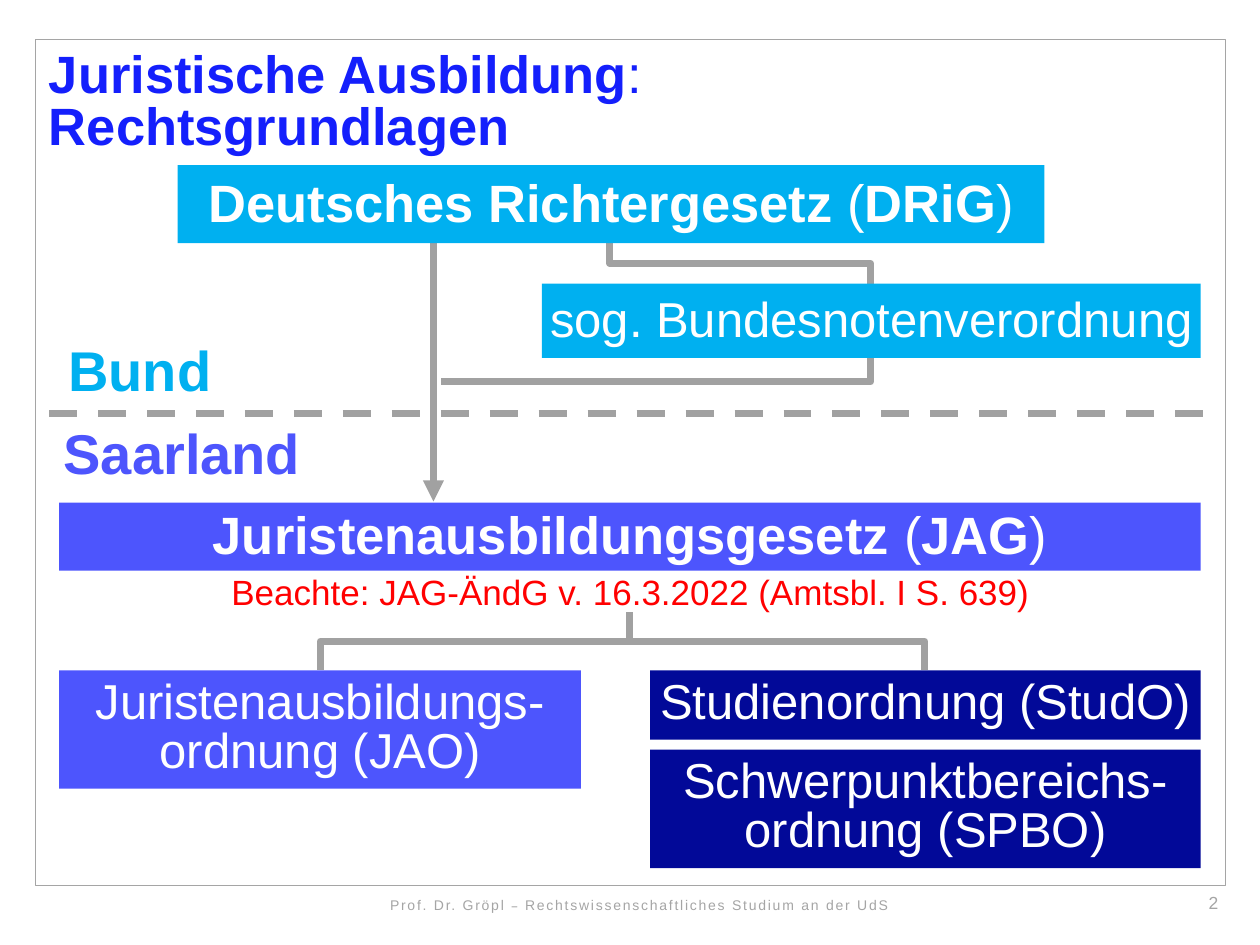
from dataclasses import dataclass

from lxml.etree import SubElement
from pptx import Presentation
from pptx.dml.color import RGBColor
from pptx.enum.dml import MSO_LINE
from pptx.enum.shapes import MSO_CONNECTOR, MSO_SHAPE
from pptx.enum.text import MSO_ANCHOR, PP_ALIGN
from pptx.oxml.ns import qn
from pptx.util import Inches, Pt


@dataclass(frozen=True)
class Theme:
    font: str = "Arial"
    dash_font: str = "League Spartan"
    title: str = "141FFC"
    federal: str = "00B0F0"
    state: str = "4D55FD"
    faculty: str = "020998"
    line: str = "A1A1A1"
    muted: str = "A5A5A5"
    alert: str = "FF0000"
    white: str = "FFFFFF"
    label_size: float = 32
    law_size: float = 30
    rule_size: float = 28
    note_size: float = 20
    page_size: float = 10
    footer_size: float = 8
    spacing: float = 0.83
    line_width: float = 4


@dataclass(frozen=True)
class Run:
    text: str
    bold: bool = False
    font: str = Theme.font


@dataclass(frozen=True)
class Box:
    """A filled box naming one law or regulation."""
    left: float
    top: float
    width: float
    height: float
    fill: str
    runs: list[Run]
    size: float = Theme.rule_size
    margins: tuple = (0.04, 0.08, 0.04, 0.08)
    anchor: MSO_ANCHOR = MSO_ANCHOR.MIDDLE


@dataclass(frozen=True)
class Elbow:
    """A connector that leaves its start vertically."""
    x1: float
    y1: float
    x2: float
    y2: float
    preset: str = "bentConnector3"


THEME = Theme()
presentation = Presentation()
presentation.slide_width, presentation.slide_height = Inches(10), Inches(7.5)
slide = presentation.slides.add_slide(presentation.slide_layouts[6])
shapes = slide.shapes


def write(shape, runs: list[Run], *, size: float, color: str, align=PP_ALIGN.CENTER,
          anchor=MSO_ANCHOR.MIDDLE, margins: tuple = (0.04,) * 4,
          spacing: float = THEME.spacing, tracking: float = 0) -> None:
    frame = shape.text_frame
    frame.word_wrap = True
    frame.vertical_anchor = anchor
    (frame.margin_left, frame.margin_top,
     frame.margin_right, frame.margin_bottom) = map(Inches, margins)
    paragraph = frame.paragraphs[0]
    paragraph.alignment = align
    paragraph.line_spacing = spacing
    for part in runs:
        run = paragraph.add_run()
        run.text = part.text
        run.font.name, run.font.bold, run.font.size = part.font, part.bold, Pt(size)
        run.font.color.rgb = RGBColor.from_string(color)
        if tracking:
            run.font._element.set("spc", str(round(tracking * 100)))


def add_label(left: float, top: float, width: float, height: float,
              runs: list[Run], **text_format) -> None:
    label = shapes.add_textbox(*map(Inches, (left, top, width, height)))
    write(label, runs, **text_format)


def add_box(box: Box) -> None:
    shape = shapes.add_shape(
        MSO_SHAPE.RECTANGLE, *map(Inches, (box.left, box.top, box.width, box.height)))
    shape.shadow.inherit = False
    shape.fill.solid()
    shape.fill.fore_color.rgb = RGBColor.from_string(box.fill)
    shape.line.fill.background()
    write(shape, box.runs, size=box.size, color=THEME.white,
          anchor=box.anchor, margins=box.margins)


def add_line(x1: float, y1: float, x2: float, y2: float, kind=MSO_CONNECTOR.STRAIGHT):
    line = shapes.add_connector(kind, *map(Inches, (x1, y1, x2, y2)))
    line.line.color.rgb = RGBColor.from_string(THEME.line)
    line.line.width = Pt(THEME.line_width)
    SubElement(line._element.spPr, qn("a:effectLst"))
    return line


def add_elbow(elbow: Elbow) -> None:
    # The preset leaves sideways, so lay it flat around the centre and turn it
    center_x, center_y = (elbow.x1 + elbow.x2) / 2, (elbow.y1 + elbow.y2) / 2
    run, drop = abs(elbow.x2 - elbow.x1) / 2, (elbow.y2 - elbow.y1) / 2
    to_right = elbow.x2 > elbow.x1
    half = -drop if to_right else drop
    line = add_line(center_x - half, center_y - run, center_x + half, center_y + run,
                    MSO_CONNECTOR.ELBOW)
    properties = line._element.spPr
    properties.find(qn("a:xfrm")).set("rot", str((270 if to_right else 90) * 60000))
    properties.find(qn("a:prstGeom")).set("prst", elbow.preset)


# Page frame, footer and page number
page_frame = shapes.add_shape(
    MSO_SHAPE.RECTANGLE, *map(Inches, (0.28, 0.31, 9.45, 6.72)))
page_frame.shadow.inherit = False
page_frame.fill.background()
page_frame.line.color.rgb = RGBColor.from_string(THEME.muted)
page_frame.line.width = Pt(0.5)
add_label(8.81, 7.03, 0.86, 0.27, [Run("2")], size=THEME.page_size, color=THEME.muted,
          align=PP_ALIGN.RIGHT, anchor=MSO_ANCHOR.TOP, margins=(0.1, 0.05, 0, 0.05),
          spacing=1.0)
add_label(1.87, 7.07, 6.41, 0.24,
          [Run("Prof. Dr. Gröpl "), Run("–", font=THEME.dash_font),
           Run(" Rechtswissenschaftliches Studium an der UdS")],
          size=THEME.footer_size, color=THEME.muted, anchor=MSO_ANCHOR.TOP,
          margins=(0.1, 0.05, 0.1, 0.05), spacing=1.0, tracking=1)

# Title
add_label(0.29, 0.33, 7.68, 0.97,
          [Run("Juristische Ausbildung", True), Run(":"), Run(" Rechtsgrundlagen", True)],
          size=THEME.law_size, color=THEME.title, align=PP_ALIGN.LEFT,
          anchor=MSO_ANCHOR.TOP, margins=(0.1, 0.08, 0.1, 0.05))

# Links between the laws
for link in (
    Elbow(4.84, 1.93, 6.91, 2.25),
    Elbow(6.91, 2.84, 3.5, 3.03, "bentConnector2"),
    Elbow(5, 4.86, 2.54, 5.32),
    Elbow(5, 4.86, 7.34, 5.32),
):
    add_elbow(link)

# Border between federal and state law, and the arrow across it
border = add_line(0.39, 3.28, 9.69, 3.28)
border.line.dash_style = MSO_LINE.DASH
federal_to_state = add_line(3.44, 1.93, 3.44, 3.98)
SubElement(federal_to_state.line._get_or_add_ln(), qn("a:tailEnd"), type="triangle")

# Laws and regulations
for law in (
    Box(1.41, 1.31, 6.88, 0.62, THEME.federal,
        [Run("Deutsches Richtergesetz", True), Run(" ("), Run("DRiG", True), Run(")")],
        THEME.law_size, (0.04, 0.12, 0.04, 0.08)),
    Box(4.3, 2.25, 5.23, 0.59, THEME.federal, [Run("sog. Bundesnotenverordnung")],
        margins=(0.04, 0.12, 0.04, 0.08)),
    Box(0.47, 3.99, 9.06, 0.54, THEME.state,
        [Run("Juristenausbildungsgesetz ", True), Run("("), Run("JAG", True), Run(")")],
        THEME.law_size, (0.04, 0.08, 0.04, 0.04)),
    Box(0.47, 5.32, 4.14, 0.94, THEME.state, [Run("Juristenausbildungs-ordnung (JAO)")]),
    Box(5.16, 5.32, 4.37, 0.55, THEME.faculty, [Run("Studienordnung (StudO)")],
        anchor=MSO_ANCHOR.TOP),
    Box(5.16, 5.95, 4.37, 0.94, THEME.faculty,
        [Run("Schwerpunktbereichs-ordnung (SPBO)")], anchor=MSO_ANCHOR.TOP),
):
    add_box(law)

# Level names and the note on the amendment
add_label(0.37, 2.66, 1.48, 0.63, [Run("Bund", True)],
          size=THEME.label_size, color=THEME.federal)
add_label(0.39, 3.36, 2.11, 0.55, [Run("Saarland", True)],
          size=THEME.label_size, color=THEME.state)
add_label(1.76, 4.54, 6.49, 0.32,
          [Run("Beachte: JAG-ÄndG v. 16.3.2022 (Amtsbl. I S. 639)")],
          size=THEME.note_size, color=THEME.alert, margins=(0.04, 0.04, 0.04, 0))

presentation.save("out.pptx")
